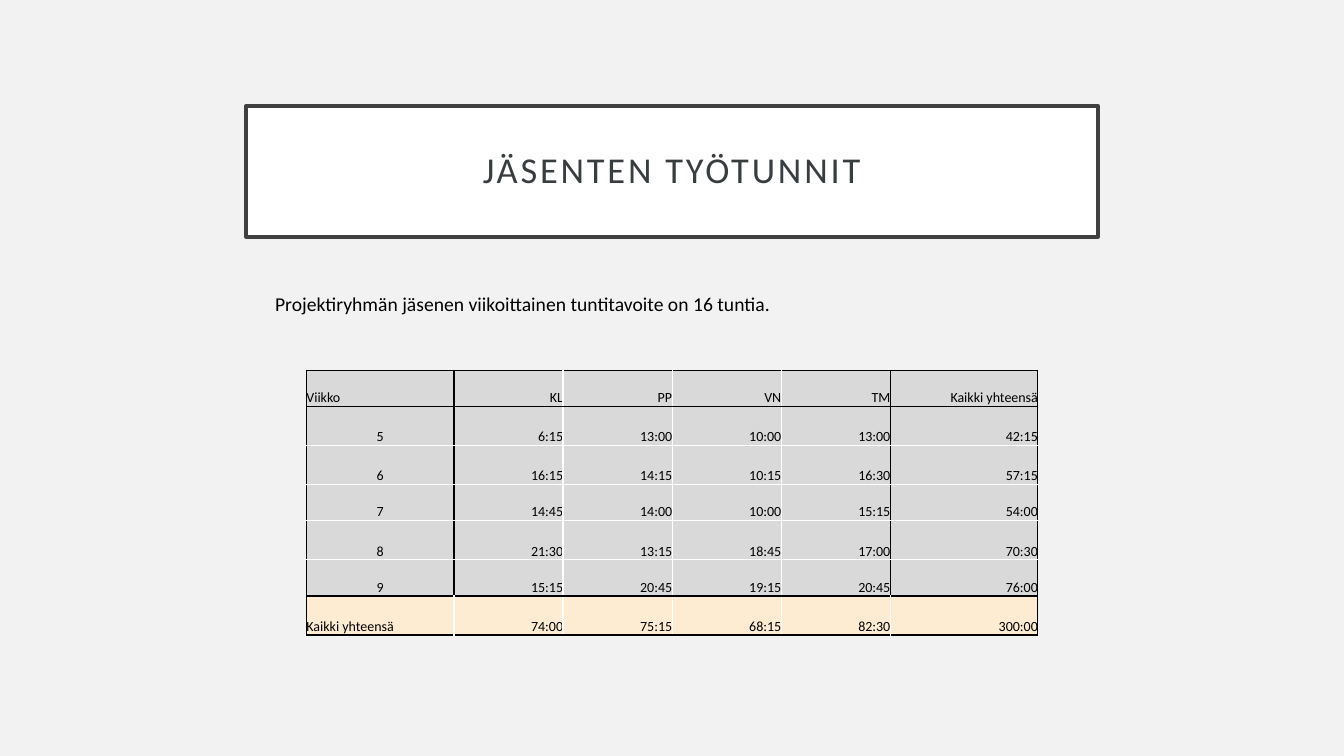
from dataclasses import dataclass

from lxml import etree
from pptx import Presentation
from pptx.dml.color import RGBColor
from pptx.enum.text import MSO_ANCHOR, MSO_AUTO_SIZE, PP_ALIGN
from pptx.oxml.ns import qn
from pptx.util import Pt

LEFT, CENTER, RIGHT = PP_ALIGN.LEFT, PP_ALIGN.CENTER, PP_ALIGN.RIGHT
MIDDLE, BOTTOM = MSO_ANCHOR.MIDDLE, MSO_ANCHOR.BOTTOM
NO_AUTOFIT = MSO_AUTO_SIZE.NONE
TITLE_ONLY = 5


@dataclass(frozen=True)
class Theme:
    font: str = "Calibri"
    background: str = "F2F2F2"
    title_fill: str = "FFFFFF"
    title_line: str = "404040"
    title_text: str = "383E40"
    text: str = "000000"
    hours_fill: str = "D9D9D9"
    total_fill: str = "FDECD2"
    strong_rule: str = "000000"
    light_rule: str = "FFFFFF"
    title_size: int = 26
    body_size: int = 14
    table_size: int = 10


class SlideBuilder:
    def __init__(self, slide, theme):
        self.slide = slide
        self.theme = theme

    def background(self):
        self.paint(self.slide.background.fill, self.theme.background)

    def paint(self, fill, color):
        fill.solid()
        fill.fore_color.rgb = RGBColor.from_string(color)

    def set_text(self, frame, text, size, color, align=LEFT):
        frame.text = text
        paragraph = frame.paragraphs[0]
        paragraph.alignment = align
        font = paragraph.runs[0].font
        font.name = self.theme.font
        font.size = Pt(size)
        font.color.rgb = RGBColor.from_string(color)
        return paragraph

    def title(self, text, left, top, width, height):
        theme = self.theme
        title = self.slide.shapes.title
        title.left, title.top = Pt(left), Pt(top)
        title.width, title.height = Pt(width), Pt(height)
        self.paint(title.fill, theme.title_fill)
        title.line.color.rgb = RGBColor.from_string(theme.title_line)
        title.line.width = Pt(2.5)
        frame = title.text_frame
        frame.word_wrap = True
        frame.auto_size = NO_AUTOFIT
        frame.vertical_anchor = MIDDLE
        frame.margin_left = frame.margin_right = Pt(14.4)
        frame.margin_top = frame.margin_bottom = Pt(14.4)
        paragraph = self.set_text(frame, text, theme.title_size, theme.title_text, CENTER)
        paragraph.line_spacing = 0.9
        paragraph.runs[0].font._element.set("spc", "200")

    def note(self, text, left, top, width, height):
        box = self.slide.shapes.add_textbox(Pt(left), Pt(top), Pt(width), Pt(height))
        box.text_frame.word_wrap = True
        self.set_text(box.text_frame, text, self.theme.body_size, self.theme.text)

    def border(self, cell, side, strong):
        color = self.theme.strong_rule if strong else self.theme.light_rule
        properties = cell._tc.get_or_add_tcPr()
        line = etree.SubElement(properties, qn(f"a:ln{side}"), w=str(Pt(1)))
        solid = etree.SubElement(line, qn("a:solidFill"))
        etree.SubElement(solid, qn("a:srgbClr"), val=color)

    def hours_table(self, rows, left, top, widths, heights):
        theme = self.theme
        row_count, column_count = len(rows), len(widths)
        table = self.slide.shapes.add_table(
            row_count, column_count, Pt(left), Pt(top),
            Pt(sum(widths)), Pt(sum(heights))).table
        table.first_row = table.horz_banding = False
        for column, width in zip(table.columns, widths):
            column.width = Pt(width)
        for row, height in zip(table.rows, heights):
            row.height = Pt(height)

        total_row = row_count - 1
        strong_horizontals = {0, 1, total_row, row_count}
        outer_verticals = {0, column_count}
        group_verticals = outer_verticals | {1, column_count - 1}
        for r, values in enumerate(rows):
            is_total = r == total_row
            strong_verticals = outer_verticals if is_total else group_verticals
            for c, value in enumerate(values):
                cell = table.cell(r, c)
                self.border(cell, "L", c in strong_verticals)
                self.border(cell, "R", c + 1 in strong_verticals)
                self.border(cell, "T", r in strong_horizontals)
                self.border(cell, "B", r + 1 in strong_horizontals)
                self.paint(cell.fill, theme.total_fill if is_total else theme.hours_fill)
                cell.margin_left = cell.margin_right = 0
                cell.margin_top = cell.margin_bottom = 0
                cell.vertical_anchor = BOTTOM
                week_align = CENTER if 0 < r < total_row else LEFT
                self.set_text(cell.text_frame, value, theme.table_size, theme.text,
                              RIGHT if c else week_align)


def main():
    presentation = Presentation()
    presentation.slide_width, presentation.slide_height = Pt(960), Pt(540)
    slide = presentation.slides.add_slide(presentation.slide_layouts[TITLE_ONLY])
    builder = SlideBuilder(slide, Theme())
    builder.background()
    builder.title("JÄSENTEN TYÖTUNNIT", 175.8, 75.6, 608.4, 93.6)
    builder.note("Projektiryhmän jäsenen viikoittainen tuntitavoite on 16 tuntia.",
                 189.4, 205.2, 546.5, 24.5)
    weekly_hours = [
        ("Viikko", "KL", "PP", "VN", "TM", "Kaikki yhteensä"),
        ("5", "6:15", "13:00", "10:00", "13:00", "42:15"),
        ("6", "16:15", "14:15", "10:15", "16:30", "57:15"),
        ("7", "14:45", "14:00", "10:00", "15:15", "54:00"),
        ("8", "21:30", "13:15", "18:45", "17:00", "70:30"),
        ("9", "15:15", "20:45", "19:15", "20:45", "76:00"),
        ("Kaikki yhteensä", "74:00", "75:15", "68:15", "82:30", "300:00"),
    ]
    low, high = 25.9, 27.9
    builder.hours_table(weekly_hours, 218.9, 264.4,
                        [105.4] + [77.9] * 4 + [105.4],
                        [low, high, high, low, high, low, high])
    presentation.save("out.pptx")


if __name__ == "__main__":
    main()
